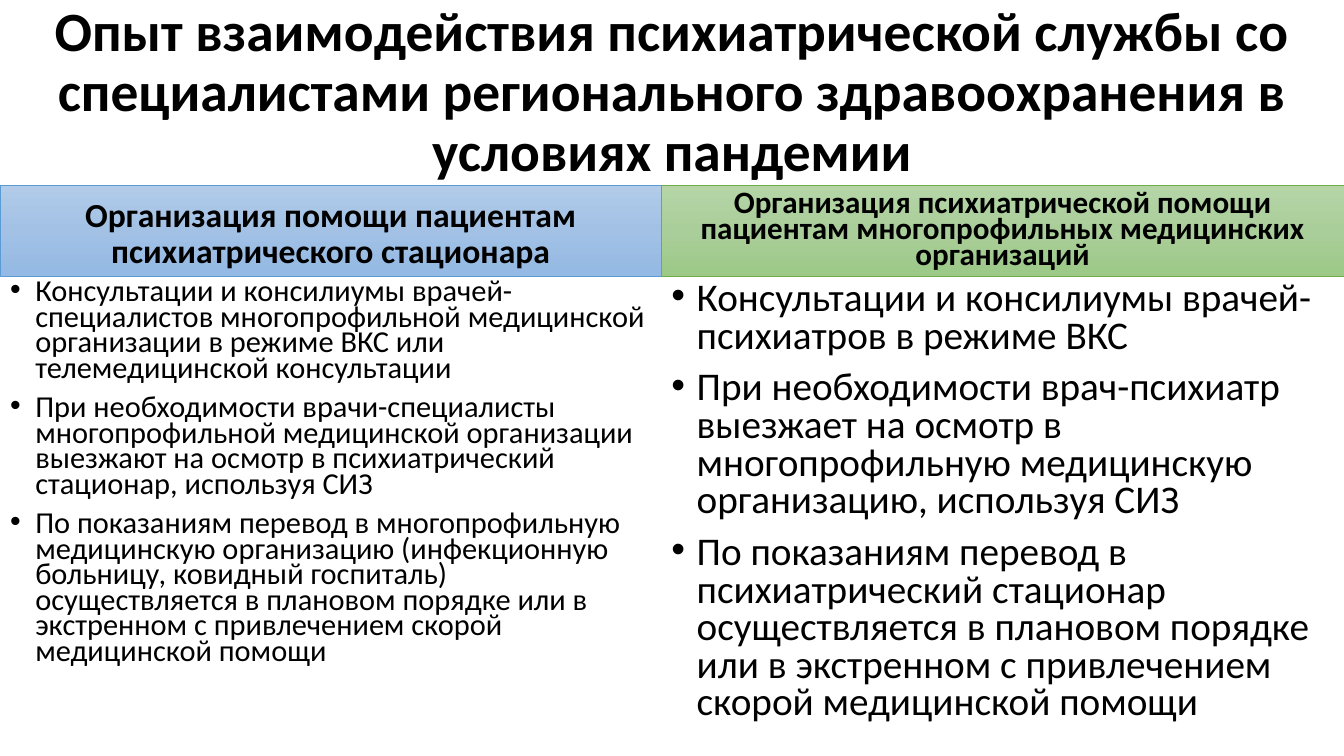
from copy import deepcopy

from lxml.etree import SubElement
from pptx import Presentation
from pptx.dml.color import RGBColor as Rgb
from pptx.enum.text import MSO_ANCHOR as Anchor, MSO_AUTO_SIZE as AutoSize, PP_ALIGN as Align
from pptx.oxml.ns import qn
from pptx.util import Inches, Pt

COLOURS = {
    "text": "000000",
    "blue_top": "B1CBE9", "blue_middle": "A3C1E5", "blue_bottom": "93B9E4", "blue_line": "5B9BD5",
    "green_top": "B5D5A7", "green_middle": "AACE9A", "green_bottom": "9CC987", "green_line": "70AD47",
}
WIDTH, HEIGHT = 13.33, 7.5
HEADING_TOP, LIST_TOP, SPLIT = 1.84, 2.74, 6.56

TITLE = ("Опыт взаимодействия психиатрической службы со специалистами "
         "регионального здравоохранения в условиях пандемии")
COLUMNS = [
    {
        "left": 0, "width": SPLIT, "theme": "blue",
        "heading": "Организация помощи пациентам психиатрического стационара",
        "heading_size": 24, "heading_spacing": 0.9,
        "items": [
            "Консультации и консилиумы врачей-специалистов многопрофильной медицинской "
            "организации в режиме ВКС или телемедицинской консультации",
            "При необходимости врачи-специалисты многопрофильной медицинской организации "
            "выезжают на осмотр в психиатрический стационар, используя СИЗ",
            "По показаниям перевод в многопрофильную медицинскую организацию (инфекционную "
            "больницу, ковидный госпиталь) осуществляется в плановом порядке или в экстренном "
            "с привлечением скорой медицинской помощи",
        ],
        "list_size": 21.7, "list_spacing": 0.7,
    },
    {
        "left": SPLIT, "width": WIDTH - SPLIT, "theme": "green",
        "heading": "Организация психиатрической помощи пациентам многопрофильных "
                   "медицинских организаций",
        "heading_size": 22.2, "heading_spacing": 0.7,
        "items": [
            "Консультации и консилиумы врачей-психиатров в режиме ВКС",
            "При необходимости врач-психиатр выезжает на осмотр в многопрофильную "
            "медицинскую организацию, используя СИЗ",
            "По показаниям перевод в психиатрический стационар осуществляется в плановом "
            "порядке или в экстренном с привлечением скорой медицинской помощи",
        ],
        "list_size": 28, "list_spacing": 0.8,
    },
]


class SlideBuilder:
    font = "Calibri"

    def __init__(self, slide):
        self.slide = slide

    def fill_placeholder(self, index, area, paragraphs, size, spacing, before=10,
                         bold=False, align=Align.CENTER, anchor=Anchor.TOP):
        """Place a placeholder at area (left, top, width, height) and style its text."""
        box = self.slide.placeholders[index]
        box.left, box.top, box.width, box.height = map(Inches, area)
        frame = box.text_frame
        frame.text = "\n".join(paragraphs)
        frame.word_wrap = True
        frame.auto_size = AutoSize.NONE
        frame.vertical_anchor = anchor
        for para in frame.paragraphs:
            para.alignment = align
            para.line_spacing = spacing
            para.space_before, para.space_after = Pt(before), Pt(0)
            for span in para.runs:
                span.font.name, span.font.size, span.font.bold = self.font, Pt(size), bold
                span.font.color.rgb = Rgb.from_string(COLOURS["text"])
        return box

    def title(self, text):
        self.fill_placeholder(0, (0, 0, WIDTH, 1.85), [text], 39.6, 0.9, before=0,
                              bold=True, anchor=Anchor.MIDDLE)

    def heading(self, index, column):
        area = (column["left"], HEADING_TOP, column["width"], LIST_TOP - HEADING_TOP)
        box = self.fill_placeholder(index, area, [column["heading"]], column["heading_size"],
                                    column["heading_spacing"], bold=True, anchor=Anchor.BOTTOM)
        self.shade(box, column["theme"])

    def shade(self, box, theme):
        """Give the box a three-stop vertical gradient and a thin outline."""
        box.fill.gradient()
        box.fill.gradient_angle = 270
        stop_list = box.fill._fill._gradFill.find(qn("a:gsLst"))
        stop_list.insert(1, deepcopy(stop_list[0]))
        for stop, position, part in zip(box.fill.gradient_stops, (0, 0.5, 1),
                                        ("top", "middle", "bottom")):
            stop.position = position
            stop.color.rgb = Rgb.from_string(COLOURS[f"{theme}_{part}"])
        box.line.color.rgb = Rgb.from_string(COLOURS[f"{theme}_line"])
        box.line.width = Pt(0.5)

    def bullet_list(self, index, column):
        area = (column["left"], LIST_TOP, column["width"], HEIGHT - LIST_TOP)
        box = self.fill_placeholder(index, area, column["items"], column["list_size"],
                                    column["list_spacing"], align=Align.LEFT)
        for para in box.text_frame.paragraphs:
            properties = para._p.get_or_add_pPr()
            properties.set("marL", str(Inches(0.25)))
            properties.set("indent", str(Inches(-0.25)))
            SubElement(properties, qn("a:buFont")).set("typeface", "Arial")
            SubElement(properties, qn("a:buChar")).set("char", "•")


def main():
    deck = Presentation()
    deck.slide_width, deck.slide_height = Inches(WIDTH), Inches(HEIGHT)
    comparison_layout = deck.slide_layouts[4]
    builder = SlideBuilder(deck.slides.add_slide(comparison_layout))
    builder.title(TITLE)
    for number, column in enumerate(COLUMNS):
        builder.heading(2 * number + 1, column)
        builder.bullet_list(2 * number + 2, column)
    deck.save("out.pptx")


if __name__ == "__main__":
    main()
